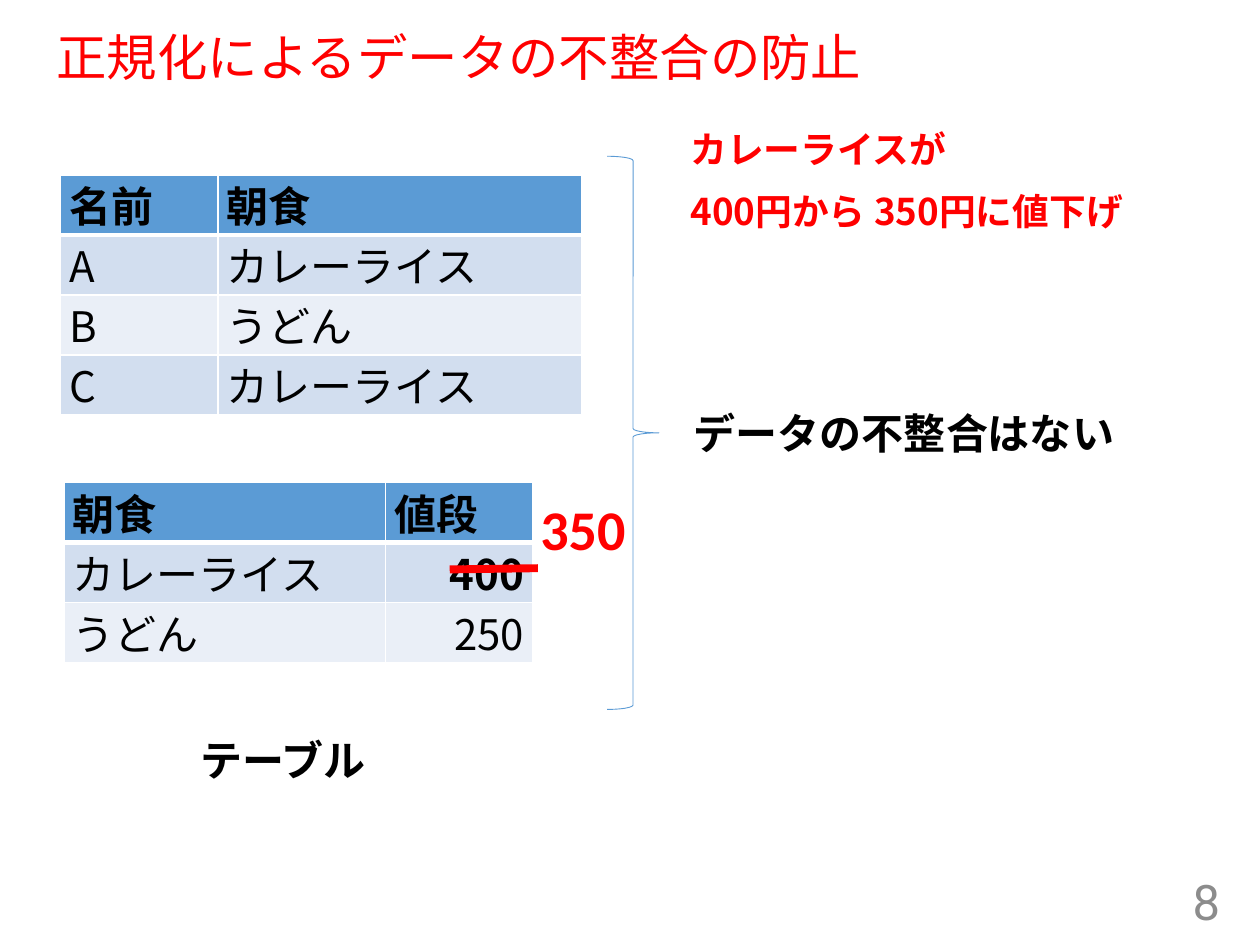
import pptx
import pptx.util
import pptx.dml.color
import pptx.enum.shapes
import pptx.enum.text
import pptx.oxml.ns
import lxml.etree

Pt = pptx.util.Pt
ALIGN = pptx.enum.text.PP_ALIGN
ANCHOR = pptx.enum.text.MSO_ANCHOR
SHAPES = pptx.enum.shapes
qn = pptx.oxml.ns.qn

THEME = {
    "red": "FF0000", "black": "000000", "gray": "8C8C8C", "white": "FFFFFF",
    "header": "5B9BD5", "bands": ("D2DEEF", "EAEFF7"),
    "cjk": "Noto Sans CJK JP", "title_font": "Arial",
    "label_font": "Calibri", "number_font": "Roboto",
    "title": 28.8, "number": 28, "body": 24, "note": 21, "price": 32,
}

LABELS = [
    ("正規化によるデータの不整合の防止", (25.2, 13.7, 666, 36.7),
     "title_font", "title", "red", False, ALIGN.LEFT, True),
    ("8", (542.2, 500.4, 162, 28.8),
     "number_font", "number", "gray", False, ALIGN.RIGHT, True),
    ("テーブル", (107.3, 416.2, 111.6, 36),
     "label_font", "body", "black", True, ALIGN.LEFT, False),
    ("データの不整合はない", (389.5, 229, 257, 36),
     "cjk", "body", "black", True, ALIGN.LEFT, False),
]
NEW_PRICE = ("350", (301.7, 278.6, 64.1, 46.1),
             "label_font", "price", "red", True, ALIGN.LEFT, False)
PRICE_CUT = ["カレーライスが", "400円から 350円に値下げ"]
PRICE_CUT_BOX = (389.5, 69.1, 330.5, 167.8)
BRACE_BOX = (347, 89.3, 29.5, 316.1)
STRIKE = (257, 325.4, 307.4, 324.7)

TABLES = [
    {"origin": (36.7, 275.8), "columns": (183.6, 84.2),
     "rows": [("朝食", "値段"), ("カレーライス", "400"), ("うどん", "250")]},
    {"origin": (34.6, 100.1), "columns": (90, 208.1),
     "rows": [("名前", "朝食"), ("A", "カレーライス"),
              ("B", "うどん"), ("C", "カレーライス")]},
]
CHANGED_PRICE = "400"
ROW_HEIGHT = 34.2
ROW_LINE = 28.2
NOTE_LINE = 25.4


def color(value):
    return pptx.dml.color.RGBColor.from_string(value)


def style(paragraph, font_key, size_key, color_key, bold, align=ALIGN.LEFT):
    paragraph.alignment = align
    for run in paragraph.runs:
        run.font.size = Pt(THEME[size_key])
        run.font.bold = bold
        run.font.color.rgb = color(THEME[color_key])
        run.font.name = THEME[font_key]
        east_asian = lxml.etree.SubElement(run._r.get_or_add_rPr(), qn("a:ea"))
        east_asian.set("typeface", THEME["cjk"])


def add_label(slide, text, box, font, size, ink, bold, align, wrap):
    frame = slide.shapes.add_textbox(*map(Pt, box)).text_frame
    frame.word_wrap = wrap
    frame.vertical_anchor = ANCHOR.MIDDLE
    frame.text = text
    style(frame.paragraphs[0], font, size, ink, bold, align)


def add_price_cut(slide):
    frame = slide.shapes.add_textbox(*map(Pt, PRICE_CUT_BOX)).text_frame
    frame.word_wrap = True
    frame.margin_left = frame.margin_right = Pt(5)
    frame.margin_top = frame.margin_bottom = Pt(2.9)
    frame.text = "\n".join(PRICE_CUT)
    for paragraph in frame.paragraphs:
        paragraph.space_before = Pt(10)
        paragraph.line_spacing = Pt(NOTE_LINE)
        style(paragraph, "cjk", "note", "red", True)


def add_borders(cell, row):
    widths = {"lnL": 1, "lnR": 1, "lnT": 3 if row == 1 else 1,
              "lnB": 3 if row == 0 else 1}
    properties = cell._tc.get_or_add_tcPr()
    for side, width in widths.items():
        border = lxml.etree.SubElement(properties, qn("a:" + side), w=str(Pt(width)))
        fill = lxml.etree.SubElement(border, qn("a:solidFill"))
        lxml.etree.SubElement(fill, qn("a:srgbClr"), val=THEME["white"])


def fill_cell(cell, text, row):
    header = row == 0
    add_borders(cell, row)
    cell.fill.solid()
    cell.fill.fore_color.rgb = color(
        THEME["header"] if header else THEME["bands"][(row - 1) % 2])
    cell.margin_left = cell.margin_right = Pt(5)
    cell.margin_top, cell.margin_bottom = Pt(ROW_HEIGHT - ROW_LINE), Pt(0)
    cell.text_frame.text = text
    paragraph = cell.text_frame.paragraphs[0]
    paragraph.line_spacing = Pt(ROW_LINE)
    style(paragraph, "cjk", "body", "black", header or text == CHANGED_PRICE,
          ALIGN.RIGHT if text.isdigit() else ALIGN.LEFT)


def add_data_table(slide, origin, columns, rows):
    size = (sum(columns), ROW_HEIGHT * len(rows))
    table = slide.shapes.add_table(
        len(rows), len(columns), *map(Pt, origin + size)).table
    for column, width in zip(table.columns, columns):
        column.width = Pt(width)
    for r, texts in enumerate(rows):
        table.rows[r].height = Pt(ROW_HEIGHT)
        for c, text in enumerate(texts):
            fill_cell(table.cell(r, c), text, r)


def add_brace(slide):
    brace = slide.shapes.add_shape(
        SHAPES.MSO_SHAPE.RIGHT_BRACE, *map(Pt, BRACE_BOX))
    brace.shadow.inherit = False
    brace.fill.background()
    brace.line.color.rgb = color(THEME["header"])
    brace.line.width = Pt(0.5)


def add_strike(slide):
    strike = slide.shapes.add_connector(
        SHAPES.MSO_CONNECTOR.STRAIGHT, *map(Pt, STRIKE))
    strike.line.color.rgb = color(THEME["red"])
    strike.line.width = Pt(4.5)
    lxml.etree.SubElement(strike._element.spPr, qn("a:effectLst"))


def main():
    presentation = pptx.Presentation()
    presentation.slide_width, presentation.slide_height = Pt(720), Pt(540)
    slide = presentation.slides.add_slide(presentation.slide_layouts[6])
    for label in LABELS:
        add_label(slide, *label)
    add_brace(slide)
    add_price_cut(slide)
    for table in TABLES:
        add_data_table(slide, **table)
    add_strike(slide)
    add_label(slide, *NEW_PRICE)
    presentation.save("out.pptx")


if __name__ == "__main__":
    main()
